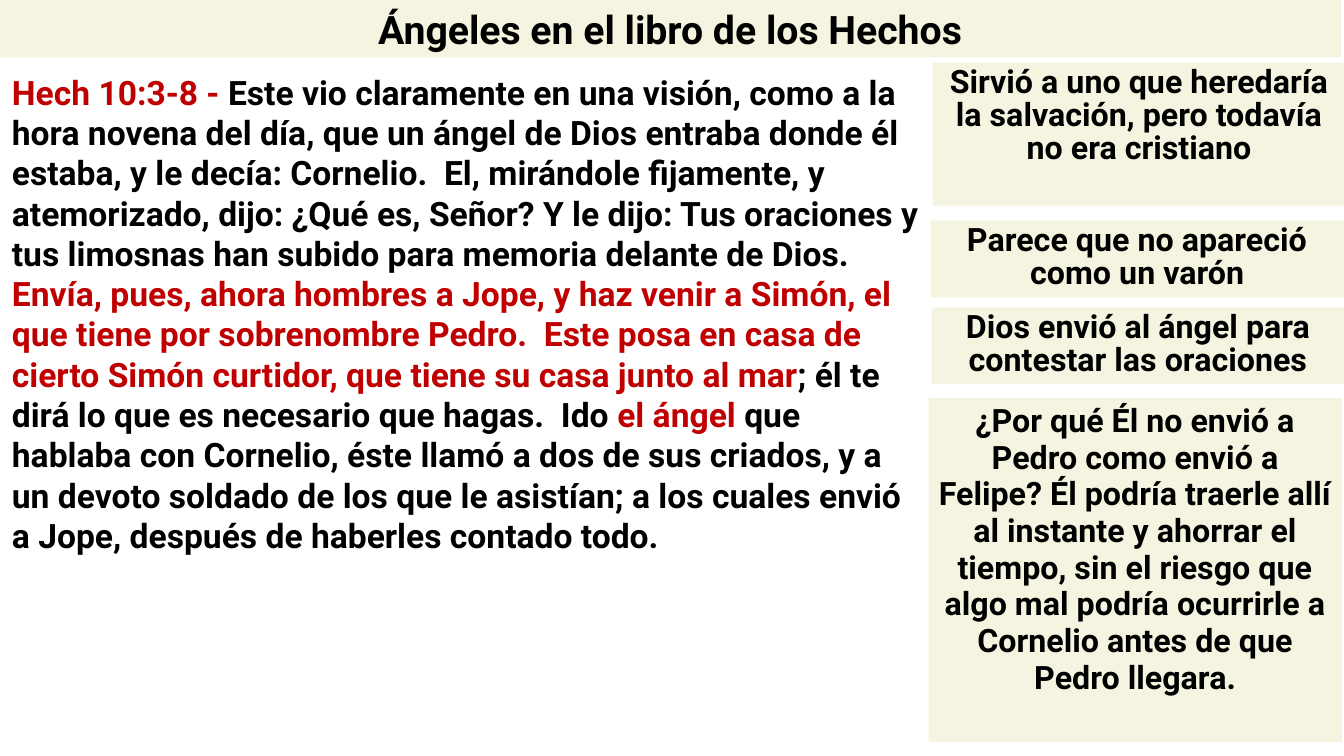
from pptx import Presentation
from pptx import util as u
from pptx.dml import color
from pptx.enum import shapes, text

PX = 9144  # 100 px to the inch

theme = {
    "font": "Roboto",
    "panel": color.RGBColor.from_string("F4F4E0"),
    "ink": color.RGBColor.from_string("000000"),
    "accent": color.RGBColor.from_string("C00000"),
    "title_size": u.Pt(28),
    "verse_size": u.Pt(24),
    "note_size": u.Pt(23),
}


def write(box, runs, size, align, spacing=None):
    """Fill a shape with one bold paragraph, run by run."""
    frame = box.text_frame
    frame.word_wrap = True
    frame.vertical_anchor = text.MSO_ANCHOR.TOP
    para = frame.paragraphs[0]
    para.alignment = align
    if spacing:
        para.line_spacing = spacing
    for words, ink in runs:
        span = para.add_run()
        span.text = words
        span.font.name = theme["font"]
        span.font.size = size
        span.font.bold = True
        span.font.color.rgb = theme[ink]


def add_panel(page, left, top, width, height):
    """Add a plain cream rectangle."""
    panel = page.shapes.add_shape(
        shapes.MSO_SHAPE.RECTANGLE, left * PX, top * PX, width * PX, height * PX)
    panel.shadow.inherit = False
    panel.fill.solid()
    panel.fill.fore_color.rgb = theme["panel"]
    panel.line.fill.background()
    return panel


deck = Presentation()
deck.slide_width = 1333 * PX
deck.slide_height = 750 * PX
page = deck.slides.add_slide(deck.slide_layouts[6])

# Title band
title = add_panel(page, -1, 0, 1331, 57)
write(title, [("Ángeles en el libro de los Hechos", "ink")],
      theme["title_size"], text.PP_ALIGN.CENTER)

# Bible passage
passage = [
    ("Hech 10:3-8 - ", "accent"),
    ("Este vio claramente en una visión, como a la hora novena del día, que un "
     "ángel de Dios entraba donde él estaba, y le decía: Cornelio.  El, mirándole "
     "fijamente, y atemorizado, dijo: ¿Qué es, Señor? Y le dijo: Tus oraciones y "
     "tus limosnas han subido para memoria delante de Dios.  ", "ink"),
    ("Envía, pues, ahora hombres a Jope, y haz venir a Simón, el que tiene por "
     "sobrenombre Pedro.  Este posa en casa de cierto Simón curtidor, que tiene "
     "su casa junto al mar", "accent"),
    ("; él te dirá lo que es necesario que hagas.  Ido ", "ink"),
    ("el ángel ", "accent"),
    ("que hablaba con Cornelio, éste llamó a dos de sus criados, y a un devoto "
     "soldado de los que le asistían; a los cuales envió a Jope, después de "
     "haberles contado todo.", "ink"),
]
verse = page.shapes.add_textbox(2 * PX, 66 * PX, 920 * PX, 576 * PX)
write(verse, passage, theme["verse_size"], text.PP_ALIGN.LEFT)

# Notes beside the passage: left, top, height, line spacing, words
notes = [
    (925, 62, 142, 0.85,
     "Sirvió a uno que heredaría la salvación, pero todavía no era cristiano"),
    (923, 219, 76, 0.85, "Parece que no apareció como un varón"),
    (924, 305, 76, 0.85, "Dios envió al ángel para contestar las oraciones"),
    (921, 395, 341, 0.95,
     "¿Por qué Él no envió a Pedro como envió a Felipe? Él podría traerle allí al "
     "instante y ahorrar el tiempo, sin el riesgo que algo mal podría ocurrirle a "
     "Cornelio antes de que Pedro llegara."),
]
for left, top, height, spacing, words in notes:
    note = add_panel(page, left, top, 410, height)
    write(note, [(words, "ink")], theme["note_size"], text.PP_ALIGN.CENTER, spacing)

deck.save("out.pptx")
